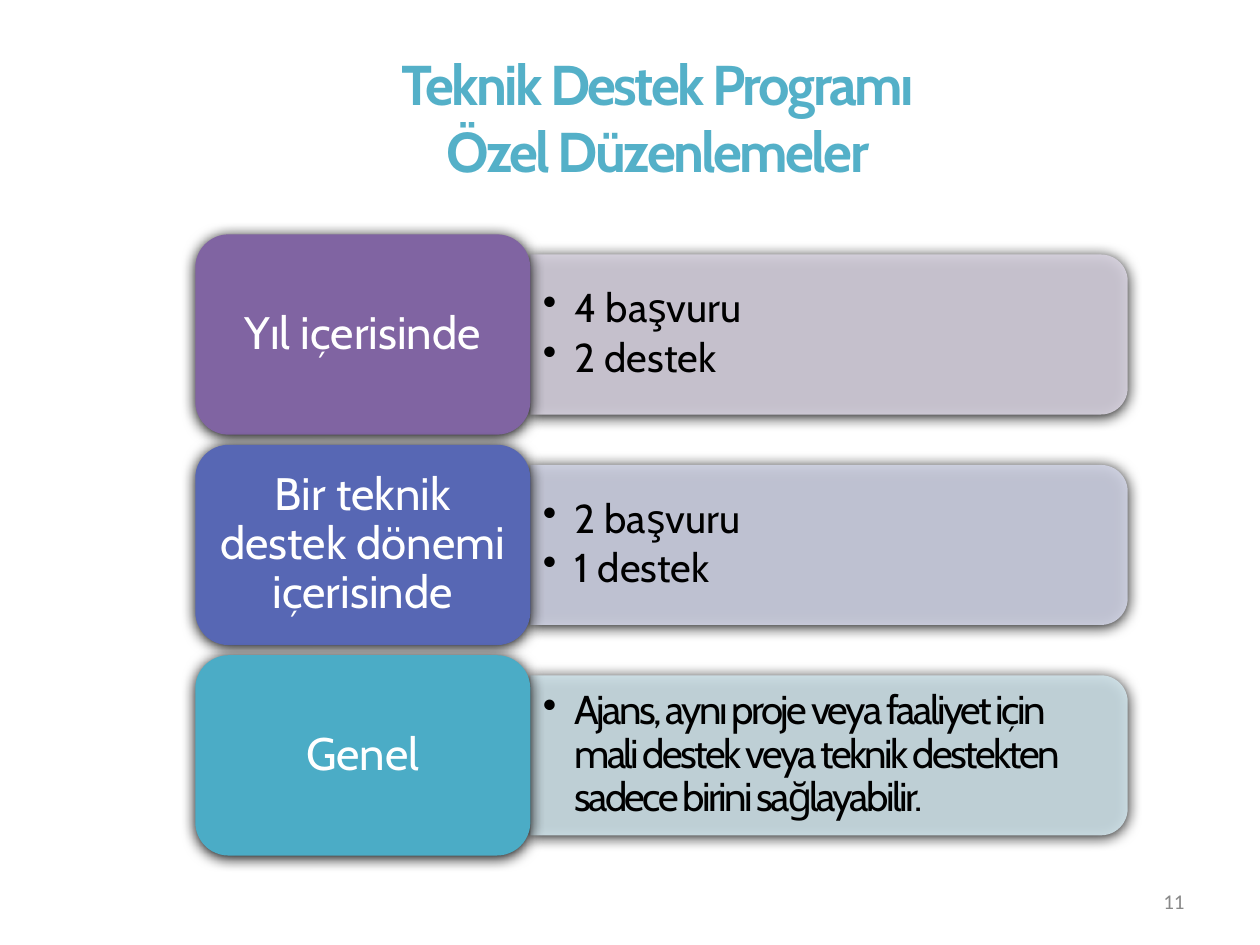
from lxml import etree
from pptx import Presentation, util as u
from pptx.dml.color import RGBColor
from pptx.enum import shapes, text
from pptx.oxml import parse_xml
from pptx.oxml.ns import nsdecls, qn

# Content
TITLE = ["Teknik Destek Programı", "Özel Düzenlemeler"]
PAGE = "11"
ROWS = [
    dict(label="Yıl içerisinde", tab="purple", panel="pale purple",
         points=["4 başvuru", "2 destek"]),
    dict(label="Bir teknik destek dönemi içerisinde", tab="blue", panel="pale blue",
         points=["2 başvuru", "1 destek"]),
    dict(label="Genel", tab="teal", panel="pale teal", spacing=-150,
         points=["Ajans, aynı proje veya faaliyet için mali destek veya teknik "
                 "destekten sadece birini sağlayabilir."]),
]
COLORS = {"purple": "8064A2", "blue": "5767B4", "teal": "4BACC6",
          "pale purple": "D8D3E0", "pale blue": "D1D4E5", "pale teal": "D0E3EA",
          "black": "000000", "white": "FFFFFF", "grey": "898989", "outline": "101A26"}

# Grid in inches
LEFT, TOP, PITCH = 1.55, 1.86, 1.67
TAB_W, TAB_H = 2.66, 1.59
PANEL_W, PANEL_H = 4.74, 1.27
TEXT_W, TEXT_H = 4.68, 1.15

TITLE_FONT = dict(name="Cabin", size=u.Pt(32), bold=True)
LABEL_FONT = dict(name="Cabin", size=u.Pt(26))
POINT_FONT = dict(name="Cabin", size=u.Pt(23))
PAGE_FONT = dict(name="Calibri", size=u.Pt(12))


def rgb(color):
    return RGBColor.from_string(COLORS[color])


def set_alpha(solid_fill, percent):
    etree.SubElement(solid_fill[0], qn("a:alpha")).set("val", str(percent * 1000))


def write(frame, lines, font, color, align, spacing=None, bullet=False, **paragraph_format):
    frame.word_wrap = True
    frame.auto_size = text.MSO_AUTO_SIZE.NONE
    frame.vertical_anchor = text.MSO_ANCHOR.MIDDLE
    for index, line in enumerate(lines):
        paragraph = frame.paragraphs[0] if index == 0 else frame.add_paragraph()
        paragraph.alignment = align
        for key, value in paragraph_format.items():
            setattr(paragraph, key, value)
        if bullet:
            properties = paragraph._p.get_or_add_pPr()
            properties.set("marL", str(u.Inches(0.25)))
            properties.set("indent", str(-u.Inches(0.25)))
            etree.SubElement(properties, qn("a:buChar")).set("char", "•")
        run = paragraph.add_run()
        run.text = line
        for key, value in font.items():
            setattr(run.font, key, value)
        run.font.color.rgb = rgb(color)
        if spacing:
            run._r.get_or_add_rPr().set("spc", str(spacing))


def add_block(slide, kind, left, top, width, height, color, rotation=0):
    shape = slide.shapes.add_shape(kind, *map(u.Inches, (left, top, width, height)))
    shape.rotation = rotation
    shape.fill.solid()
    shape.fill.fore_color.rgb = rgb(color)
    shape.line.fill.background()
    shape._element.spPr.append(parse_xml(
        f'<a:effectLst {nsdecls("a")}><a:outerShdw blurRad="{u.Pt(8.5)}" dist="{u.Pt(1)}" '
        f'dir="5400000" rotWithShape="0"><a:srgbClr val="{COLORS["black"]}"/>'
        '</a:outerShdw></a:effectLst>'))
    return shape


def add_row(slide, top, row):
    middle, right = top + TAB_H / 2, LEFT + TAB_W
    # Panel: top-rounded rectangle turned to round its right side
    panel = add_block(slide, shapes.MSO_SHAPE.ROUND_2_SAME_RECTANGLE,
                      right + (PANEL_W - PANEL_H) / 2, middle - PANEL_W / 2,
                      PANEL_H, PANEL_W, row["panel"], rotation=90)
    set_alpha(panel._element.spPr.find(qn("a:solidFill")), 90)
    box = slide.shapes.add_textbox(*map(u.Inches, (right, middle - TEXT_H / 2, TEXT_W, TEXT_H)))
    write(box.text_frame, row["points"], POINT_FONT, "black", text.PP_ALIGN.LEFT,
          row.get("spacing"), bullet=True, line_spacing=0.9, space_after=u.Pt(3.45))
    # Tab with its label
    tab = add_block(slide, shapes.MSO_SHAPE.ROUNDED_RECTANGLE,
                    LEFT, top, TAB_W, TAB_H, row["tab"])
    tab.text_frame.margin_left = tab.text_frame.margin_right = u.Inches(0.11)
    write(tab.text_frame, [row["label"]], LABEL_FONT, "white", text.PP_ALIGN.CENTER,
          line_spacing=0.9)


def main():
    presentation = Presentation()
    presentation.slide_width, presentation.slide_height = u.Inches(10), u.Inches(7.5)
    slide = presentation.slides.add_slide(presentation.slide_layouts[5])

    # Title
    title = slide.shapes.title
    title.left, title.top, title.width, title.height = map(u.Inches, (0.72, 0.3, 9, 1.25))
    write(title.text_frame, TITLE, TITLE_FONT, "teal", text.PP_ALIGN.CENTER, spacing=-150)
    for paragraph in title.text_frame.paragraphs:
        font = paragraph.runs[0].font
        set_alpha(font._element.find(qn("a:solidFill")), 95)
        line = parse_xml(f'<a:ln {nsdecls("a")} w="{u.Pt(1.06)}"><a:solidFill>'
                         f'<a:srgbClr val="{COLORS["outline"]}"/></a:solidFill></a:ln>')
        set_alpha(line[0], 6)
        font._element.insert(0, line)

    # Rows
    for index, row in enumerate(ROWS):
        add_row(slide, TOP + index * PITCH, row)

    # Page number
    number = slide.shapes.add_textbox(*map(u.Inches, (7.17, 6.95, 2.33, 0.4)))
    write(number.text_frame, [PAGE], PAGE_FONT, "grey", text.PP_ALIGN.RIGHT)

    presentation.save("out.pptx")


if __name__ == "__main__":
    main()
